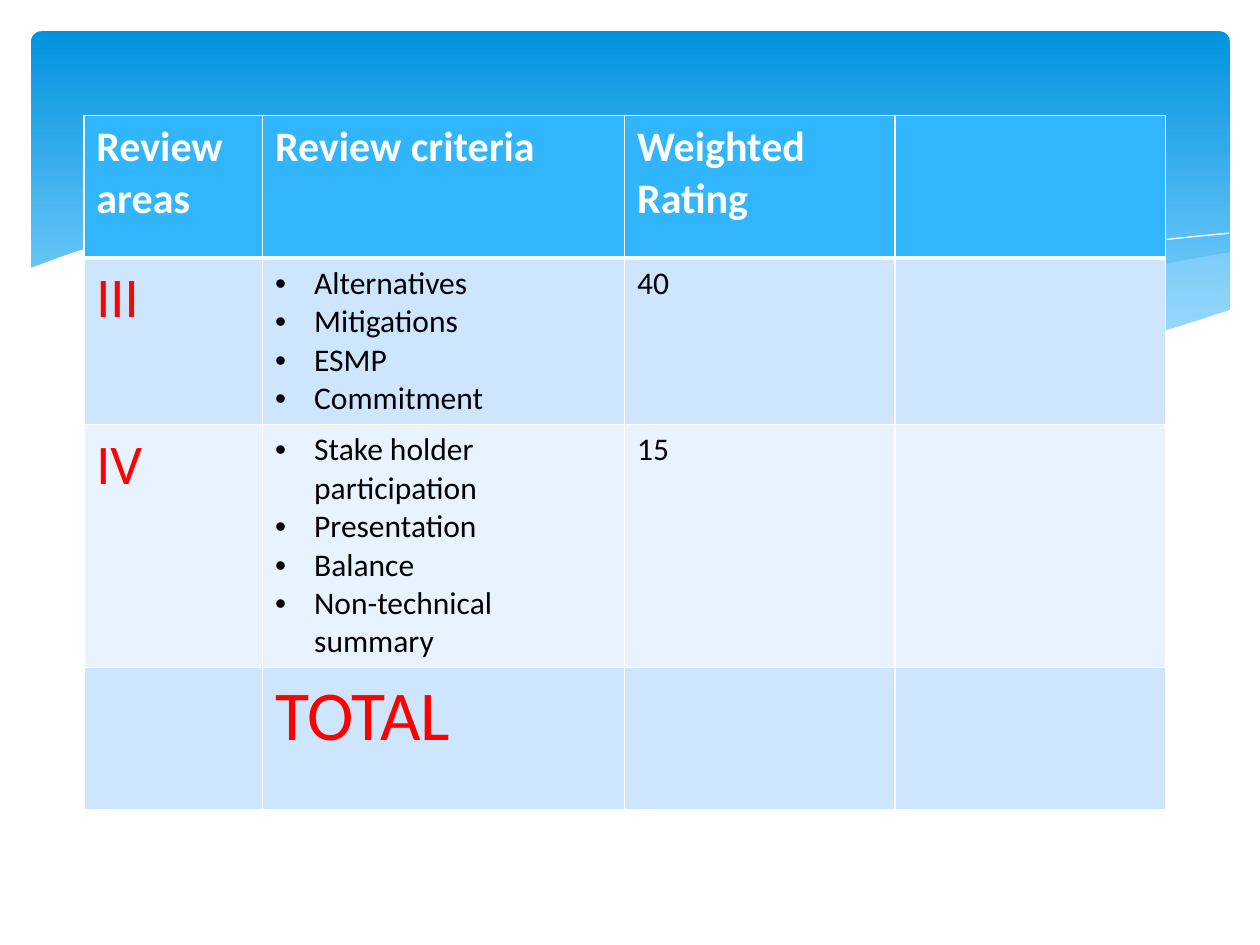
from lxml import etree
from pptx import Presentation
from pptx import util as u
from pptx.dml.color import RGBColor
from pptx.enum import shapes
from pptx.oxml.ns import qn

THEME = {
    "font": "Calibri", "white": "FFFFFF", "mist": "C6E7FC",
    "banner_top": "0293E0", "banner_bottom": "83D3FE",
    "header_fill": "31B6FD", "bands": ("CEE5FE", "E8F3FF"),
    "red": "FF0000", "black": "000000", "thin": 1, "thick": 3,
    "sizes": {"header": 24, "area": 32, "body": 18, "bullet": 18, "total": 40},
    "colors": {"header": "white", "area": "red", "body": "black",
               "bullet": "black", "total": "red"},
}

# Each cell: (style, paragraphs), or None when it is empty
ROWS = [
    [("header", ["Review areas"]), ("header", ["Review criteria"]),
     ("header", ["Weighted", "Rating"]), None],
    [("area", ["III"]),
     ("bullet", ["Alternatives", "Mitigations", "ESMP", "Commitment"]),
     ("body", ["40"]), None],
    [("area", ["IV"]),
     ("bullet", ["Stake holder participation", "Presentation", "Balance",
                 "Non-technical summary"]),
     ("body", ["15"]), None],
    [None, ("total", ["TOTAL"]), None, None],
]
TABLE_LEFT, TABLE_TOP, TABLE_HEIGHT = 1.69, 2.33, 13.89
COLUMN_WIDTHS = [3.6, 7.3, 5.45, 5.45]
ROW_HEIGHT = 2.87
BULLET_INDENT = 0.79

# Each edge is a smooth curve through a few points, in centimetres
WAVES = [
    {"fill": "mist", "opacity": 29, "edges": [
        [(24.8, 5.08), (22.6, 5.5), (16.8, 6.73)],
        [(16.8, 6.73), (20.4, 7.06), (23, 6.78), (24.8, 6.27)]]},
    {"fill": "mist", "opacity": 40, "edges": [
        [(22.7, 6.93), (16, 5.64), (11.8, 4.93), (7.26, 4.85)],
        [(7.26, 4.85), (11.4, 5.64), (16.9, 6.76), (20.5, 7.06), (22.7, 6.93)]]},
    {"line": "white", "edges": [
        [(7.85, 4.95), (11, 4.75), (14.1, 5), (18.5, 5.74), (23.05, 6.91)]]},
    {"line": "white", "edges": [
        [(15.57, 6.53), (19, 5.66), (22.4, 4.98), (24.78, 4.7)]]},
    {"fill": "white", "opacity": 100, "edges": [
        [(24.8, 6.25), (22.8, 6.83), (20.5, 7.04), (16.5, 6.65), (11.4, 5.59),
         (7.4, 4.83), (4.1, 4.67), (2.1, 4.92), (0.6, 5.41)],
        [(0.6, 8.36), (24.8, 8.36)]]},
]
CURVE_STEPS = 8


def rgb(name):
    return RGBColor.from_string(THEME.get(name, name))


def smooth(edge):
    """Catmull-Rom points along an edge; two points stay a straight line."""
    padded = [edge[0], *edge, edge[-1]]
    points = [edge[0]]
    for a, b, c, d in zip(padded, padded[1:], padded[2:], padded[3:]):
        for step in range(1, CURVE_STEPS + 1):
            t = step / CURVE_STEPS
            points.append(tuple(
                q + t / 2 * (r - p + t * (2 * p - 5 * q + 4 * r - s
                                          + t * (3 * (q - r) + s - p)))
                for p, q, r, s in zip(a, b, c, d)))
    return points


def add_banner(slide):
    banner = slide.shapes.add_shape(
        shapes.MSO_SHAPE.ROUNDED_RECTANGLE,
        u.Cm(0.63), u.Cm(0.63), u.Cm(24.16), u.Cm(6.86))
    banner.adjustments[0] = 0.03
    banner.shadow.inherit = False
    banner.line.fill.background()
    banner.fill.gradient()
    banner.fill.gradient_angle = 270
    stops = [(0, "banner_top"), (0.9, "banner_bottom")]
    for stop, (position, color) in zip(banner.fill.gradient_stops, stops):
        stop.position = position
        stop.color.rgb = rgb(color)


def add_wave(slide, wave):
    start, *rest = [(u.Cm(x), u.Cm(y))
                    for edge in wave["edges"] for x, y in smooth(edge)]
    builder = slide.shapes.build_freeform(*start)
    builder.add_line_segments(rest, close="fill" in wave)
    outline = builder.convert_to_shape()
    outline.shadow.inherit = False
    if "line" in wave:
        outline.fill.background()
        outline.line.color.rgb = rgb(wave["line"])
        outline.line.width = u.Pt(0)
        return
    outline.line.fill.background()
    outline.fill.solid()
    outline.fill.fore_color.rgb = rgb(wave["fill"])
    color = next(outline._element.spPr.iter(qn("a:srgbClr")))
    etree.SubElement(color, qn("a:alpha"), val=str(wave["opacity"] * 1000))


def add_borders(cell, bottom):
    properties = cell._tc.get_or_add_tcPr()
    for side in "LRTB":
        width = bottom if side == "B" else THEME["thin"]
        border = etree.SubElement(properties, qn(f"a:ln{side}"), w=str(u.Pt(width)))
        fill = etree.SubElement(border, qn("a:solidFill"))
        etree.SubElement(fill, qn("a:srgbClr"), val=THEME["white"])


def add_bullet(paragraph):
    properties = paragraph._p.get_or_add_pPr()
    indent = u.Cm(BULLET_INDENT)
    properties.set("marL", str(indent))
    properties.set("indent", str(-indent))
    etree.SubElement(properties, qn("a:buFont"), typeface="Arial")
    etree.SubElement(properties, qn("a:buChar"), char="•")


def write_cell(cell, style, lines):
    font_values = {"name": THEME["font"], "size": u.Pt(THEME["sizes"][style]),
                   "bold": style == "header"}
    frame = cell.text_frame
    for index, line in enumerate(lines):
        paragraph = frame.add_paragraph() if index else frame.paragraphs[0]
        if style == "bullet":
            add_bullet(paragraph)
        run = paragraph.add_run()
        run.text = line
        for attribute, value in font_values.items():
            setattr(run.font, attribute, value)
        run.font.color.rgb = rgb(THEME["colors"][style])


def add_review_table(slide):
    frame = slide.shapes.add_table(
        len(ROWS), len(COLUMN_WIDTHS), u.Cm(TABLE_LEFT), u.Cm(TABLE_TOP),
        u.Cm(sum(COLUMN_WIDTHS)), u.Cm(TABLE_HEIGHT))
    review = frame.table
    for column, width in zip(review.columns, COLUMN_WIDTHS):
        column.width = u.Cm(width)
    for r, row in enumerate(ROWS):
        review.rows[r].height = u.Cm(ROW_HEIGHT)
        fill = THEME["bands"][(r - 1) % 2] if r else THEME["header_fill"]
        for c, content in enumerate(row):
            cell = review.cell(r, c)
            add_borders(cell, THEME["thin"] if r else THEME["thick"])
            cell.fill.solid()
            cell.fill.fore_color.rgb = rgb(fill)
            if content:
                write_cell(cell, *content)
    frame.height = u.Cm(TABLE_HEIGHT)


def main():
    deck = Presentation()
    deck.slide_width, deck.slide_height = u.Cm(25.4), u.Cm(19.05)
    slide = deck.slides.add_slide(deck.slide_layouts.get_by_name("Blank"))
    add_banner(slide)
    for wave in WAVES:
        add_wave(slide, wave)
    add_review_table(slide)
    deck.save("out.pptx")


if __name__ == "__main__":
    main()
